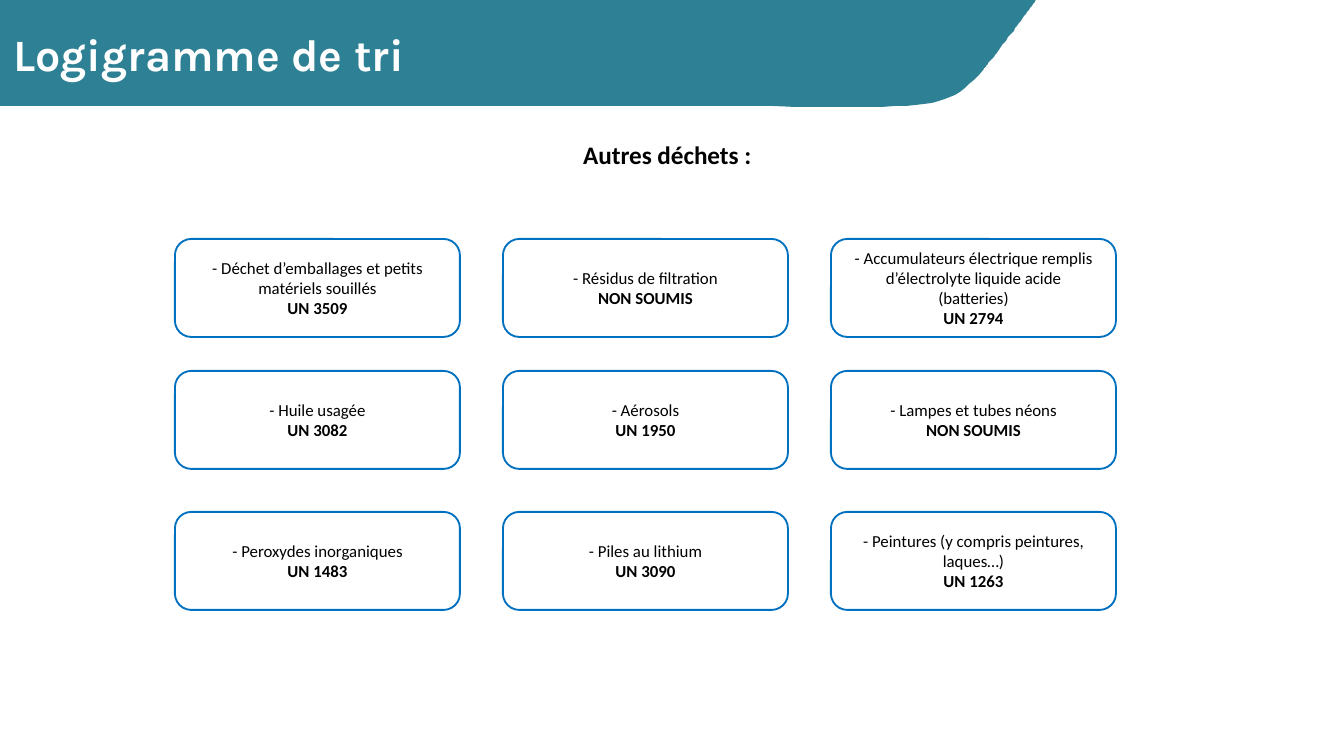
from dataclasses import dataclass
from typing import Any

from pptx import Presentation
from pptx.dml.color import RGBColor as Rgb
from pptx.enum.shapes import MSO_SHAPE as Kind
from pptx.enum.text import MSO_ANCHOR as Anchor, PP_ALIGN as Align
from pptx.util import Pt

SCALE = 914400 / 134.4  # EMU per px
Point = tuple[float, float]


@dataclass(frozen=True)
class Theme:
    teal: Rgb = Rgb(0x2E, 0x81, 0x94)
    blue: Rgb = Rgb(0x00, 0x70, 0xC0)
    white: Rgb = Rgb(0xFF, 0xFF, 0xFF)
    black: Rgb = Rgb(0x00, 0x00, 0x00)
    head: str = "Karla"
    body: str = "Calibri"
    title: float = 24
    sub: float = 13.5
    small: float = 9


@dataclass(frozen=True)
class Card:
    waste: str
    code: str


THEME = Theme()
LEFT, STEP, WIDE, HIGH = 175, 328, 285, 98
TOPS = (239, 371, 512)
ROWS = (
    (
        Card("- Déchet d’emballages et petits matériels souillés", "UN 3509"),
        Card("- Résidus de filtration", "NON SOUMIS"),
        Card("- Accumulateurs électrique remplis d’électrolyte liquide acide (batteries)",
             "UN 2794"),
    ),
    (
        Card("- Huile usagée", "UN 3082"),
        Card("- Aérosols", "UN 1950"),
        Card("- Lampes et tubes néons", "NON SOUMIS"),
    ),
    (
        Card("- Peroxydes inorganiques", "UN 1483"),
        Card("- Piles au lithium", "UN 3090"),
        Card("- Peintures (y compris peintures, laques…)", "UN 1263"),
    ),
)
# Right edge of the banner: two control points and an end for each curve
EDGE = (
    ((1035, 1), (1012, 34), (1003, 44)),
    ((995, 56), (985, 67), (984, 69)),
    ((941, 116), (943, 106), (688, 106)),
)


def px(size: int) -> int:
    return round(size * SCALE)


def write(par: Any, text: str, font: str, size: float, color: Rgb,
          bold: bool = False, align: Align = Align.CENTER) -> None:
    par.text, par.alignment = text, align
    par.font.name, par.font.size, par.font.bold = font, Pt(size), bold
    par.font.color.rgb = color


def curve(a: Point, b: Point, c: Point, d: Point, count: int = 24) -> list[Point]:
    """Points along a cubic curve, without its start."""
    points = []
    for i in range(1, count + 1):
        t = i / count
        u = 1 - t
        mix = (u**3, 3 * u * u * t, 3 * u * t * t, t**3)
        points.append(tuple(sum(m * p[k] for m, p in zip(mix, (a, b, c, d)))
                            for k in (0, 1)))
    return points


def draw_banner(slide: Any, text: str) -> None:
    points: list[Point] = [(1036, 0)]
    for one, two, end in EDGE:
        points += curve(points[-1], one, two, end)
    build = slide.shapes.build_freeform(0, 0, scale=SCALE)
    build.add_line_segments(points + [(0, 106)], close=True)
    shape = build.convert_to_shape()
    shape.shadow.inherit = False
    shape.fill.solid()
    shape.fill.fore_color.rgb = THEME.teal
    shape.line.fill.background()
    frame = shape.text_frame
    frame.vertical_anchor = Anchor.MIDDLE
    par = frame.paragraphs[0]
    write(par, text, THEME.head, THEME.title, THEME.white, True, Align.LEFT)
    par.space_before = Pt(5)


def draw_sub(slide: Any, text: str) -> None:
    box = slide.shapes.add_textbox(px(570), px(133), px(195), px(44))
    box.text_frame.word_wrap = False
    write(box.text_frame.paragraphs[0], text, THEME.body, THEME.sub,
          THEME.black, True, Align.LEFT)


def draw_card(slide: Any, card: Card, left: int, top: int) -> None:
    shape = slide.shapes.add_shape(Kind.ROUNDED_RECTANGLE,
                                   px(left), px(top), px(WIDE), px(HIGH))
    shape.shadow.inherit = False
    shape.fill.background()
    shape.line.color.rgb, shape.line.width = THEME.blue, Pt(1)
    frame = shape.text_frame
    frame.word_wrap, frame.vertical_anchor = True, Anchor.MIDDLE
    write(frame.paragraphs[0], card.waste, THEME.body, THEME.small, THEME.black)
    write(frame.add_paragraph(), card.code, THEME.body, THEME.small,
          THEME.black, True)


def main() -> None:
    deck = Presentation()
    deck.slide_width, deck.slide_height = px(1344), px(756)
    slide = deck.slides.add_slide(deck.slide_layouts[6])

    # Heading
    draw_banner(slide, "Logigramme de tri")
    draw_sub(slide, "Autres déchets :")

    # Grid of waste types
    for top, row in zip(TOPS, ROWS):
        for col, card in enumerate(row):
            draw_card(slide, card, LEFT + col * STEP, top)

    deck.save("out.pptx")


if __name__ == "__main__":
    main()
